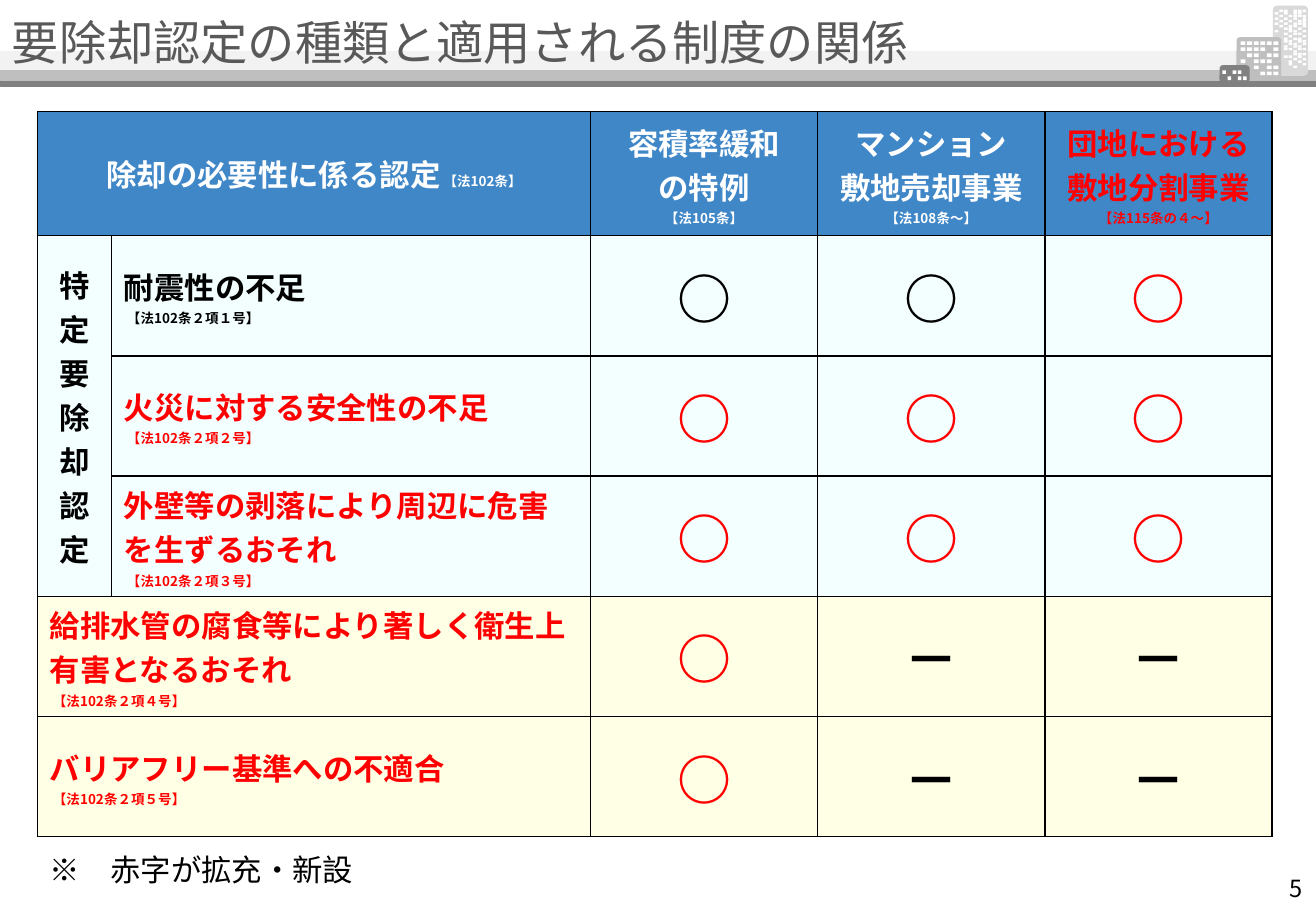
from lxml import etree
from pptx import Presentation
from pptx.dml.color import RGBColor
from pptx.enum import shapes, text
from pptx.oxml import ns
from pptx.util import Inches, Pt

FONT = "Noto Sans CJK JP"
WHITE, BLACK, RED = "FFFFFF", "000000", "FF0000"
BLUE, AQUA, CREAM = "4087C8", "F3FFFF", "FFFFE5"
LEFT, CENTER, RIGHT = text.PP_ALIGN.LEFT, text.PP_ALIGN.CENTER, text.PP_ALIGN.RIGHT
RECT, ROUND = shapes.MSO_SHAPE.RECTANGLE, shapes.MSO_SHAPE.ROUNDED_RECTANGLE

presentation = Presentation()
presentation.slide_width, presentation.slide_height = Inches(10.83), Inches(7.5)
slide = presentation.slides.add_slide(presentation.slide_layouts[6])


def add_block(kind, left, top, width, height, color, line_width=0):
    shape = slide.shapes.add_shape(kind, Inches(left), Inches(top), Inches(width), Inches(height))
    shape.shadow.inherit = False
    shape.fill.solid()
    shape.fill.fore_color.rgb = RGBColor.from_string(color)
    if line_width:
        shape.line.color.rgb = RGBColor.from_string(color)
        shape.line.width = Pt(line_width)
    else:
        shape.line.fill.background()
    return shape


def write(frame, paragraphs, color, align=LEFT, bold=False):
    """Fill a text frame; each paragraph is a list of (wording, size) runs."""
    frame.word_wrap = True
    for index, runs in enumerate(paragraphs):
        paragraph = frame.paragraphs[0] if index == 0 else frame.add_paragraph()
        paragraph.alignment = align
        for wording, size in runs:
            run = paragraph.add_run()
            run.text = wording
            run.font.size, run.font.bold, run.font.name = Pt(size), bold, FONT
            run.font.color.rgb = RGBColor.from_string(color)
            etree.SubElement(run.font._element, ns.qn("a:ea"), typeface=FONT)


# Header bands and buildings; each window row lists the columns that have a window
bands = [(0.42, 0.16, "F2F2F2"), (0.66, 0.05, "808080"), (0.58, 0.08, "BFBFBF")]
for top, height, color in bands:
    add_block(RECT, 0, top, 10.83, height, color, 0.25)

buildings = [
    # box, corner, colour, first and last window x, first and last y, window size, window rows
    ((10.49, 0.06, 0.26, 0.55), 0.08, "D9D9D9", (10.49, 10.72), (0.08, 0.54), (0.03, 0.02),
     "12456 0245 13456 0246 1356 02456 1346 235 0346 245 36 245 "
     "2356 346 245 2356 4 456 235 46 35 36 4"),
    ((10.19, 0.32, 0.34, 0.32), 0.05, "BFBFBF", (10.21, 10.48), (0.34, 0.59), (0.04, 0.03),
     "012345 01235 1245 0234 0245 345"),
    ((10.05, 0.55, 0.22, 0.12), 0.14, "808080", (10.06, 10.23), (0.58, 0.63), (0.03, 0.03),
     "023 134"),
]
for box, corner, color, (x_first, x_last), (y_first, y_last), window, pattern in buildings:
    add_block(ROUND, *box, color, 2).adjustments[0] = corner
    rows = pattern.split()
    x_step = (x_last - x_first) / int(max("".join(rows)))
    y_step = (y_last - y_first) / (len(rows) - 1)
    for row, columns in enumerate(rows):
        for column in columns:
            add_block(RECT, x_first + int(column) * x_step, y_first + row * y_step, *window, WHITE)

# Title, page number and note
labels = [
    ((0, 0.08, 9.83, 0.52), "要除却認定の種類と適用される制度の関係", 28, "595959", LEFT,
     text.MSO_ANCHOR.MIDDLE),
    ((8.29, 6.96, 2.53, 0.52), "5", 14, BLACK, RIGHT, text.MSO_ANCHOR.BOTTOM),
    ((0.31, 6.96, 10.54, 0.42), "※　赤字が拡充・新設", 18, BLACK, LEFT, text.MSO_ANCHOR.TOP),
]
for box, wording, size, color, align, anchor in labels:
    frame = slide.shapes.add_textbox(*map(Inches, box)).text_frame
    frame.vertical_anchor = anchor
    write(frame, [[(wording, size)]], color, align)

# Table
column_widths = [0.61, 3.94, 1.87, 1.87, 1.87]
row_heights = [1.02] + [0.99] * 5
table = slide.shapes.add_table(6, 5, Inches(0.31), Inches(0.92), Inches(10.16), Inches(5.97)).table
for column, width in zip(table.columns, column_widths):
    column.width = Inches(width)
for row, height in zip(table.rows, row_heights):
    row.height = Inches(height)

for row, color in enumerate([BLUE, AQUA, AQUA, AQUA, CREAM, CREAM]):
    for column in range(5):
        cell = table.cell(row, column)
        cell.vertical_anchor = text.MSO_ANCHOR.MIDDLE
        cell.fill.solid()
        cell.fill.fore_color.rgb = RGBColor.from_string(color)
        properties = cell._tc.get_or_add_tcPr()
        for position, side in enumerate(["lnL", "lnR", "lnT", "lnB"]):
            border = etree.Element(ns.qn(f"a:{side}"), w=str(Pt(1)))
            fill = etree.SubElement(border, ns.qn("a:solidFill"))
            etree.SubElement(fill, ns.qn("a:srgbClr"), val=BLACK)
            properties.insert(position, border)

for row in (0, 4, 5):
    table.cell(row, 0).merge(table.cell(row, 1))
table.cell(1, 0).merge(table.cell(3, 0))

write(table.cell(0, 0).text_frame, [[("除却の必要性に係る認定", 18), (" 【法102条】", 8)]],
      WHITE, CENTER, True)
systems = [
    ("容積率緩和", "の特例", "【法105条】", WHITE),
    ("マンション", "敷地売却事業", "【法108条～】", WHITE),
    ("団地における", "敷地分割事業", "【法115条の４～】", RED),
]
for column, (first, second, law, color) in enumerate(systems, 2):
    write(table.cell(0, column).text_frame, [[(first, 18)], [(second, 18)], [(law, 8)]],
          color, CENTER, True)

group_cell = table.cell(1, 0)
group_cell._tc.get_or_add_tcPr().set("vert", "eaVert")
write(group_cell.text_frame, [[("特定要除却認定", 18)]], BLACK, CENTER, True)

criteria = [
    (1, "耐震性の不足", "１", BLACK, "○○○", (BLACK, BLACK, RED)),
    (1, "火災に対する安全性の不足", "２", RED, "○○○", (RED, RED, RED)),
    (1, "外壁等の剥落により周辺に危害を生ずるおそれ", "３", RED, "○○○", (RED, RED, RED)),
    (0, "給排水管の腐食等により著しく衛生上有害となるおそれ", "４", RED, "○－－", (RED, BLACK, BLACK)),
    (0, "バリアフリー基準への不適合", "５", RED, "○－－", (RED, BLACK, BLACK)),
]
for row, (name_column, name, item, color, marks, mark_colors) in enumerate(criteria, 1):
    write(table.cell(row, name_column).text_frame,
          [[(name, 18)], [(f" 【法102条２項{item}号】", 8)]], color, LEFT, True)
    for column, (mark, mark_color) in enumerate(zip(marks, mark_colors), 2):
        write(table.cell(row, column).text_frame, [[(mark, 32)]], mark_color, CENTER, True)

presentation.save("out.pptx")
